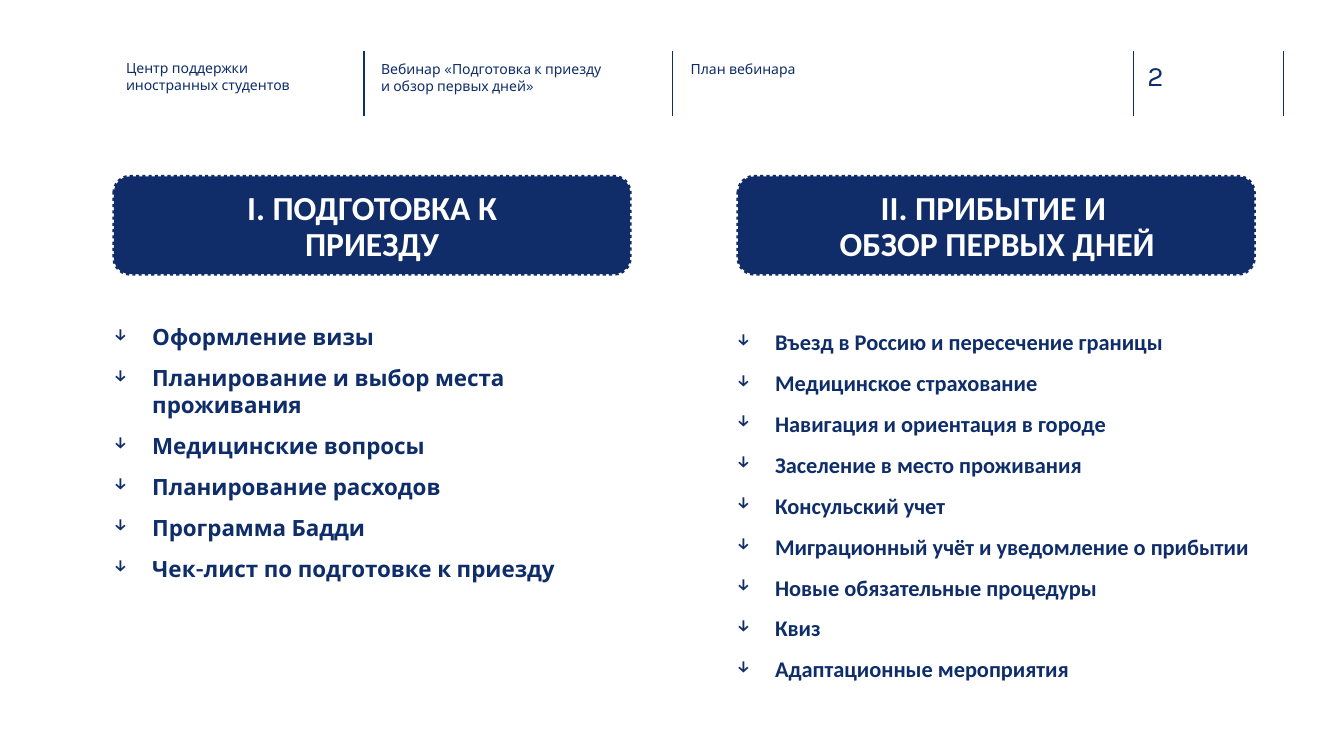
"""Build the webinar plan slide: header strip, two titled columns of topics."""
from lxml.etree import SubElement
from pptx import Presentation
from pptx.dml.color import RGBColor
from pptx.enum.dml import MSO_LINE
from pptx.enum.shapes import MSO_CONNECTOR, MSO_SHAPE
from pptx.enum.text import PP_ALIGN
from pptx.oxml.ns import qn
from pptx.util import Inches, Pt


def shade(color, code):
    color.rgb = RGBColor.from_string(code)


def write(box, lines, look, ins=None, form={}, mark=None):
    area = slide.shapes.add_textbox(*map(Inches, box)).text_frame
    area.word_wrap = True
    if ins:
        for side, size in zip(("left", "top", "right", "bottom"), ins):
            setattr(area, "margin_" + side, Inches(size))
    for row, line in enumerate(lines):
        para = area.add_paragraph() if row else area.paragraphs[0]
        if mark:
            props = para._p.get_or_add_pPr()
            props.set("marL", str(Inches(0.38)))
            props.set("indent", str(-Inches(0.38)))
            if row:
                para.space_before = Pt(10)
            SubElement(props, qn("a:buSzPct")).set("val", "80000")
            SubElement(props, qn("a:buChar")).set("char", mark)
        for name, value in form.items():
            setattr(para, name, value)
        para.text = line
        for run in para.runs:
            for name, value in look.items():
                if name == "color":
                    shade(run.font.color, value)
                else:
                    setattr(run.font, name, value)


deck = Presentation()
deck.slide_width, deck.slide_height = Inches(13.33), Inches(7.5)
slide = deck.slides.add_slide(deck.slide_layouts[6])

NAVY, INK, WHITE = "102D69", "0E2D69", "FFFFFF"
FLUSH = (0, 0, 0, 0)
HEAD = {"name": "Karla", "size": Pt(10), "color": INK}
PAGE = {"name": "Karla", "size": Pt(20), "color": NAVY}
TITLE = {"name": "Calibri", "size": Pt(24), "bold": True, "color": WHITE}
TOPIC = {"size": Pt(16), "bold": True, "color": INK}
MID = {"alignment": PP_ALIGN.CENTER, "line_spacing": 0.9}

for left in (3.61, 6.67, 11.24, 12.73):
    rule = slide.shapes.add_connector(
        MSO_CONNECTOR.STRAIGHT, *map(Inches, (left, 0.51, left, 1.15)))
    shade(rule.line.color, NAVY)
    rule.line.width = Pt(1)
    SubElement(rule._element.spPr, qn("a:effectLst"))

for box, text in (
    ((1.25, 0.59, 2.08, 0.45), "Центр поддержки иностранных студентов"),
    ((3.78, 0.6, 2.26, 0.45), "Вебинар «Подготовка к приезду и обзор первых дней»"),
    ((6.85, 0.6, 2.26, 0.45), "План вебинара"),
):
    write(box, [text], HEAD, FLUSH)
write((11.38, 0.58, 0.73, 0.34), ["2"], PAGE, FLUSH)

plan = (
    (1.13, (1.9, 1.85, 3.58, 0.5), "I. ПОДГОТОВКА К ПРИЕЗДУ",
     (1.13, 3.21, 5.12, 2.87), "Karla", (0, 0, 0, 0.05),
     ["Оформление визы",
      "Планирование и выбор места проживания",
      "Медицинские вопросы",
      "Планирование расходов",
      "Программа Бадди",
      "Чек-лист по подготовке к приезду"]),
    (7.32, (7.43, 1.85, 4.92, 0.77), "II. ПРИБЫТИЕ И \vОБЗОР ПЕРВЫХ ДНЕЙ",
     (7.21, 3.21, 5.37, 3.23), "Calibri", None,
     ["Въезд в Россию и пересечение границы",
      "Медицинское страхование",
      "Навигация и ориентация в городе",
      "Заселение в место проживания",
      "Консульский учет",
      "Миграционный учёт и уведомление о прибытии",
      "Новые обязательные процедуры",
      "Квиз",
      "Адаптационные мероприятия"]),
)
for left, top, title, body, font, ins, topics in plan:
    card = slide.shapes.add_shape(
        MSO_SHAPE.ROUNDED_RECTANGLE, *map(Inches, (left, 1.75, 5.12, 0.97)))
    card.shadow.inherit = False
    card.fill.solid()
    shade(card.fill.fore_color, NAVY)
    shade(card.line.color, NAVY)
    card.line.width = Pt(2.25)
    card.line.dash_style = MSO_LINE.ROUND_DOT
    write(top, [title], TITLE, form=MID)
    write(body, topics, {**TOPIC, "name": font}, ins, mark="↓")

deck.save("out.pptx")
